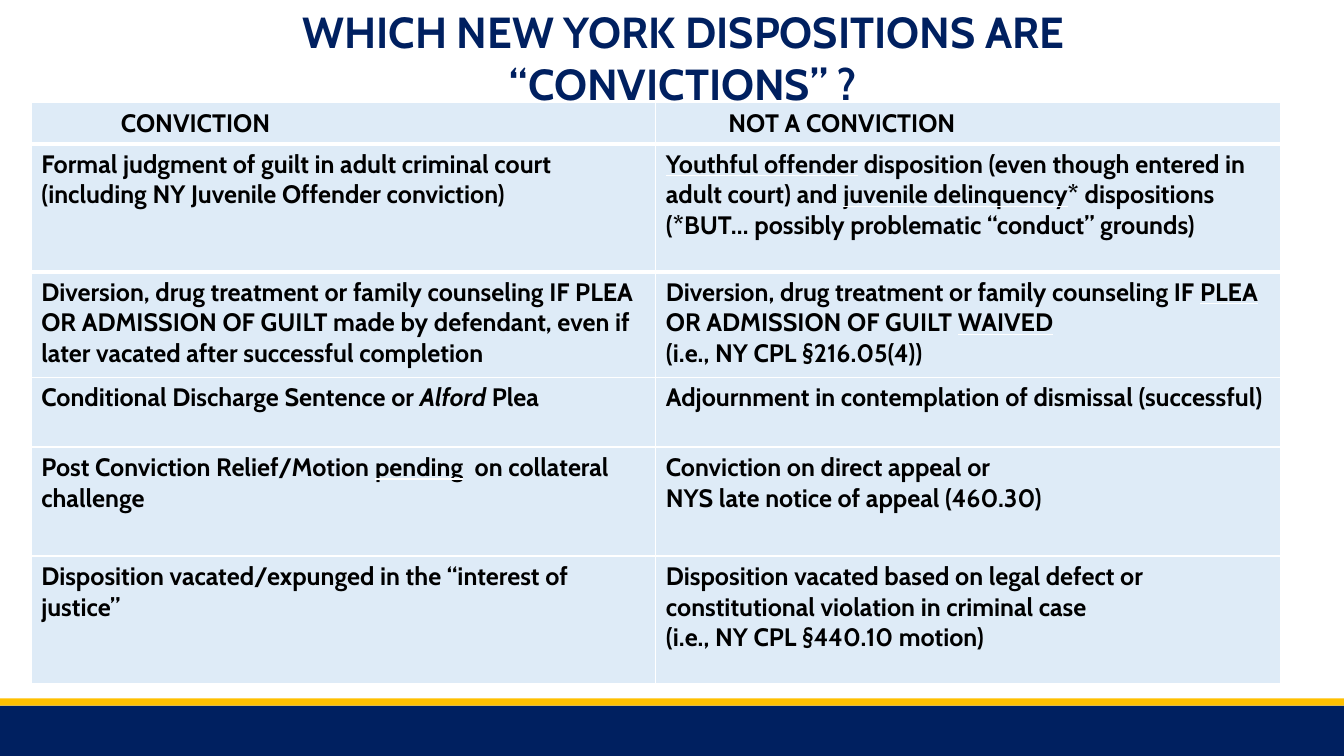
import pptx
import pptx.util
import pptx.dml.color
import pptx.enum.shapes
import pptx.enum.text
import pptx.oxml
import pptx.oxml.ns
from lxml import etree

Inches = pptx.util.Inches
Pt = pptx.util.Pt

COLORS = {"navy": "002060", "gold": "FFC000", "cell": "DEEBF7",
          "text": "000000", "rule": "FFFFFF"}
FONT = "Cabin"
ROW_HEIGHTS = [0.39, 1.27, 1.05, 0.69, 1.08, 1.27]
HEADINGS = [("CONVICTION", 0.89), ("NOT A CONVICTION", 0.72)]

# A cell is a list of paragraphs; a paragraph is a list of (text, style) runs.
DISPOSITIONS = [
    ([[("Formal judgment of guilt in adult criminal court", "")],
      [("(including NY Juvenile Offender conviction)", "")]],
     [[("Youthful offender", "underline"),
       (" disposition (even though entered in adult court) and ", ""),
       ("juvenile delinquency", "underline"),
       ("* dispositions (*BUT… possibly problematic “conduct” grounds)", "")]]),
    ([[("Diversion, drug treatment or family counseling IF PLEA OR ADMISSION "
        "OF GUILT made by defendant, even if later vacated after successful "
        "completion", "")]],
     [[("Diversion, drug treatment or family counseling IF ", ""),
       ("PLEA", "underline"), (" OR ADMISSION OF GUILT ", ""),
       ("WAIVED", "underline")],
      [("(i.e., NY CPL §216.05(4))", "")]]),
    ([[("Conditional Discharge Sentence or ", ""), ("Alford", "italic"),
       (" Plea", "")]],
     [[("Adjournment in contemplation of dismissal (successful)", "")]]),
    ([[("Post Conviction Relief/Motion ", ""), ("pending", "underline"),
       ("  on collateral challenge", "")]],
     [[("Conviction on direct appeal or", "")],
      [("NYS late notice of appeal (460.30)", "")]]),
    ([[("Disposition vacated/expunged in the “interest of justice”", "")]],
     [[("Disposition vacated based on legal defect or constitutional "
        "violation in criminal case", "")],
      [("(i.e., NY CPL §440.10 motion)", "")]]),
]


def rgb(name):
    return pptx.dml.color.RGBColor.from_string(COLORS[name])


def format_font(font, size, color):
    font.name = FONT
    font.size = Pt(size)
    font.bold = True
    font.color.rgb = rgb(color)


def add_band(slide, left, top, width, height, color):
    band = slide.shapes.add_shape(
        pptx.enum.shapes.MSO_SHAPE.RECTANGLE,
        Inches(left), Inches(top), Inches(width), Inches(height))
    band.shadow.inherit = False
    band.fill.solid()
    band.fill.fore_color.rgb = rgb(color)
    band.line.fill.background()


def place_title(slide, left, top, width, height):
    title = slide.shapes.title
    title.left, title.top = Inches(left), Inches(top)
    title.width, title.height = Inches(width), Inches(height)
    frame = title.text_frame
    frame.text = "WHICH NEW YORK DISPOSITIONS ARE “CONVICTIONS” ?"
    frame.word_wrap = True
    frame.auto_size = pptx.enum.text.MSO_AUTO_SIZE.NONE
    frame.vertical_anchor = pptx.enum.text.MSO_ANCHOR.MIDDLE
    heading = frame.paragraphs[0]
    heading.alignment = pptx.enum.text.PP_ALIGN.CENTER
    format_font(heading.font, 31, "navy")


def underline(run):
    """Underline a run in the colour of the table rules."""
    run.font.underline = True
    fill = etree.SubElement(run.font._element, pptx.oxml.ns.qn("a:uFill"))
    solid = etree.SubElement(fill, pptx.oxml.ns.qn("a:solidFill"))
    etree.SubElement(solid, pptx.oxml.ns.qn("a:srgbClr"), val=COLORS["rule"])


def set_rule(cell, side, points):
    """Draw one cell border; side is a:lnT or a:lnB."""
    properties = cell._tc.get_or_add_tcPr()
    line = etree.Element(pptx.oxml.ns.qn(side), w=str(Pt(points)))
    solid = etree.SubElement(line, pptx.oxml.ns.qn("a:solidFill"))
    etree.SubElement(solid, pptx.oxml.ns.qn("a:srgbClr"), val=COLORS["rule"])
    properties.insert(0, line)


def fill_cell(cell, paragraphs):
    cell.fill.solid()
    cell.fill.fore_color.rgb = rgb("cell")
    frame = cell.text_frame
    for index, runs in enumerate(paragraphs):
        paragraph = frame.add_paragraph() if index else frame.paragraphs[0]
        format_font(paragraph.font, 18, "text")
        for text, style in runs:
            run = paragraph.add_run()
            run.text = text
            if style == "underline":
                underline(run)
            elif style == "italic":
                run.font.italic = True


def add_dispositions(slide, left, top, width):
    table = slide.shapes.add_table(
        len(ROW_HEIGHTS), len(HEADINGS), Inches(left), Inches(top),
        Inches(width), Inches(sum(ROW_HEIGHTS))).table
    table.first_row = False
    table.horz_banding = False
    for row, height in zip(table.rows, ROW_HEIGHTS):
        row.height = Inches(height)
    for column, (heading, indent) in enumerate(HEADINGS):
        cell = table.cell(0, column)
        fill_cell(cell, [[(heading, "")]])
        cell.margin_left = Inches(indent)
        set_rule(cell, "a:lnB", 3)
        set_rule(table.cell(1, column), "a:lnT", 3)
    for row, pair in enumerate(DISPOSITIONS, start=1):
        for column, paragraphs in enumerate(pair):
            fill_cell(table.cell(row, column), paragraphs)


def main():
    deck = pptx.Presentation()
    deck.slide_width, deck.slide_height = Inches(13.33), Inches(7.5)
    slide = deck.slides.add_slide(deck.slide_layouts.get_by_name("Title Only"))
    add_band(slide, 0, 7, 13.33, 0.5, "navy")
    add_band(slide, 0, 6.93, 13.33, 0.07, "gold")
    place_title(slide, 2.44, 0.11, 8.67, 0.91)
    add_dispositions(slide, 0.31, 1.02, 12.39)
    deck.save("out.pptx")


if __name__ == "__main__":
    main()
